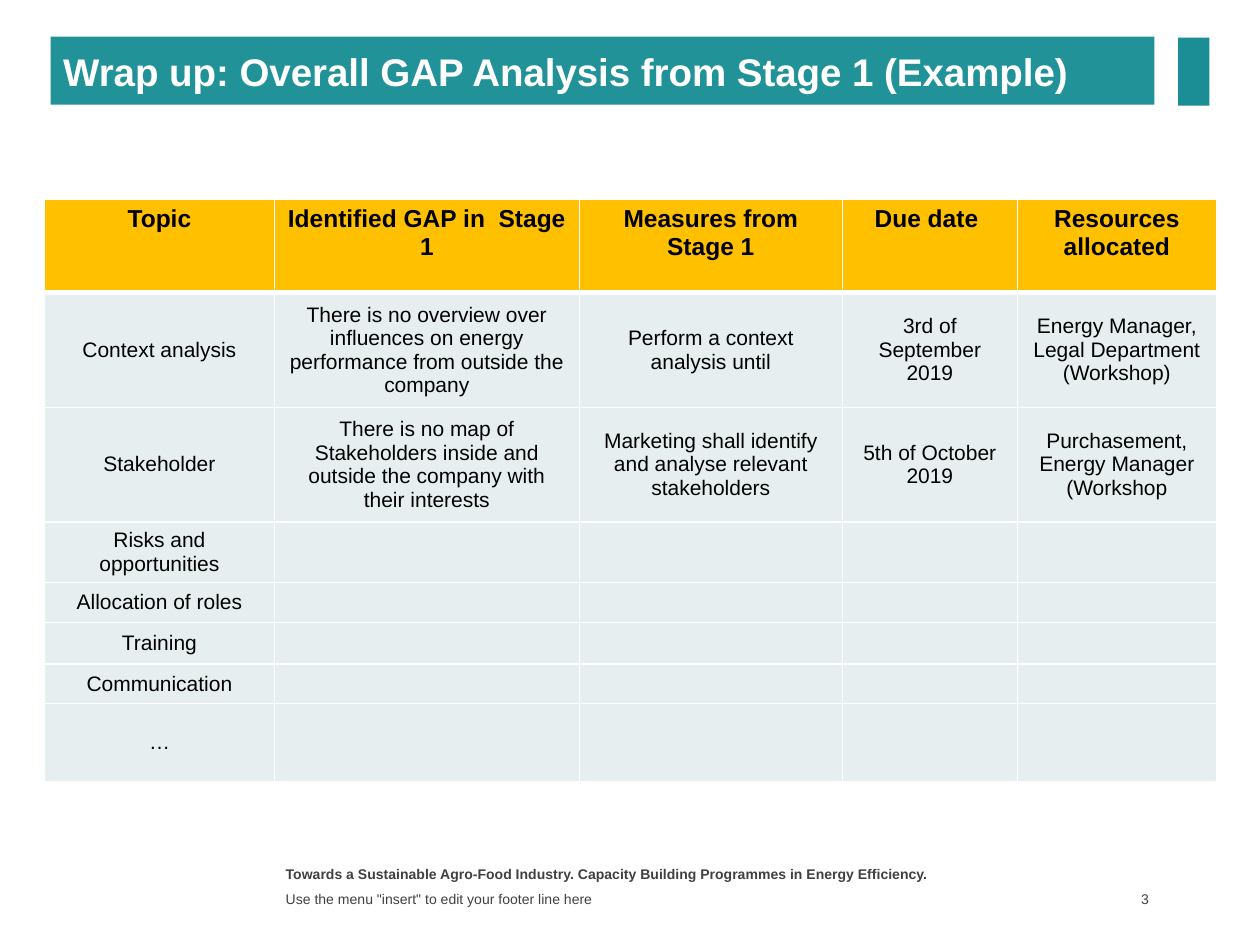
from pptx import Presentation
from pptx import util as u
from pptx.dml.color import RGBColor
from pptx.enum import shapes, text
from pptx.oxml import parse_xml
from pptx.oxml.ns import nsdecls

Cm, Pt = u.Cm, u.Pt
TEAL = RGBColor(0x20, 0x92, 0x98)
DEEP = RGBColor(0x1B, 0x8E, 0x95)
GOLD = RGBColor(0xFF, 0xC0, 0x00)
PALE = RGBColor(0xE7, 0xEE, 0xEF)
GREY = RGBColor(0x40, 0x40, 0x40)
BLACK = RGBColor(0, 0, 0)
WHITE = RGBColor(0xFF, 0xFF, 0xFF)
LEFT, MID, RIGHT = text.PP_ALIGN.LEFT, text.PP_ALIGN.CENTER, text.PP_ALIGN.RIGHT
TOP, CENTER = text.MSO_ANCHOR.TOP, text.MSO_ANCHOR.MIDDLE

# Content
TITLE = "Wrap up: Overall GAP Analysis from Stage 1 (Example)"
HEAD = ["Topic", "Identified GAP in  Stage 1", "Measures from Stage 1",
        "Due date ", "Resources allocated"]
BODY = [
    ["Context analysis",
     "There is no overview over influences on energy performance "
     "from outside the company",
     "Perform a context analysis until", "3rd of September 2019",
     "Energy Manager, Legal Department (Workshop)"],
    ["Stakeholder",
     "There is no map of Stakeholders inside and outside the company "
     "with their interests",
     "Marketing shall identify and analyse relevant stakeholders",
     "5th of October 2019", "Purchasement, Energy Manager (Workshop"],
    ["Risks and opportunities"],
    ["Allocation of roles"],
    ["Training"],
    ["Communication"],
    ["…"],
]
WIDTHS = [4.63, 6.15, 5.3, 3.53, 4.01]
HEIGHTS = [1.88, 2.31, 2.31, 1.22, 0.81, 0.84, 0.79, 1.57]
# Footer: words, place in cm, bold, alignment, anchor, right inset
FOOT = [
    ("Towards a Sustainable Agro-Food Industry. "
     "Capacity Building Programmes in Energy Efficiency.",
     (5.51, 17.32, 13.97, 0.53), True, LEFT, TOP, 0.25),
    ('Use the menu "insert" to edit your footer line here',
     (5.51, 17.88, 13.97, 0.48), False, LEFT, CENTER, 0.25),
    ("3", (21.84, 17.86, 1.42, 0.51), False, RIGHT, CENTER, 0.1),
]


def style(para, size, color, bold, align):
    para.alignment = align
    font = para.font
    font.name, font.size, font.bold = "Arial", Pt(size), bold
    font.color.rgb = color


def border(cell, sides):
    """Draw white cell edges; sides maps an edge to its width in points."""
    props = cell._tc.get_or_add_tcPr()
    for i, (side, width) in enumerate(sides.items()):
        props.insert(i, parse_xml(
            f'<a:ln{side} {nsdecls("a")} w="{Pt(width)}"><a:solidFill>'
            f'<a:srgbClr val="{WHITE}"/></a:solidFill></a:ln{side}>'))


deck = Presentation()
deck.slide_width, deck.slide_height = Cm(25.4), Cm(19.05)
slide = deck.slides.add_slide(deck.slide_layouts[5])

# Title bar
title = slide.shapes.title
title.left, title.top, title.width, title.height = map(Cm, (1.02, 0.74, 22.25, 1.37))
title.fill.solid()
title.fill.fore_color.rgb = TEAL
frame = title.text_frame
frame.text = TITLE
frame.auto_size = text.MSO_AUTO_SIZE.NONE
frame.vertical_anchor = CENTER
style(frame.paragraphs[0], 22, WHITE, True, LEFT)

# Accent block
block = slide.shapes.add_shape(shapes.MSO_SHAPE.RECTANGLE,
                               *map(Cm, (23.75, 0.76, 0.63, 1.37)))
block.shadow.inherit = False
block.fill.solid()
block.fill.fore_color.rgb = DEEP
block.line.fill.background()

# Gap table
rows = [HEAD] + BODY
grid = slide.shapes.add_table(len(rows), len(HEAD), Cm(0.9), Cm(4.02),
                              Cm(sum(WIDTHS)), Cm(sum(HEIGHTS))).table
grid.horz_banding = False
for col, width in zip(grid.columns, WIDTHS):
    col.width = Cm(width)
for r, words in enumerate(rows):
    grid.rows[r].height = Cm(HEIGHTS[r])
    top = r == 0
    for c in range(len(HEAD)):
        cell = grid.cell(r, c)
        cell.text = words[c] if c < len(words) else ""
        cell.vertical_anchor = TOP if top else CENTER
        cell.fill.solid()
        cell.fill.fore_color.rgb = GOLD if top else PALE
        border(cell, {"L": 1, "R": 1, "T": 3 if r == 1 else 1, "B": 3 if top else 1})
        style(cell.text_frame.paragraphs[0], 14 if top else 12, BLACK, top, MID)

# Footer lines and page number
for words, place, bold, align, anchor, inset in FOOT:
    frame = slide.shapes.add_textbox(*map(Cm, place)).text_frame
    frame.word_wrap = True
    frame.vertical_anchor = anchor
    frame.margin_right = Cm(inset)
    frame.text = words
    style(frame.paragraphs[0], 8, GREY, bold, align)

deck.save("out.pptx")
